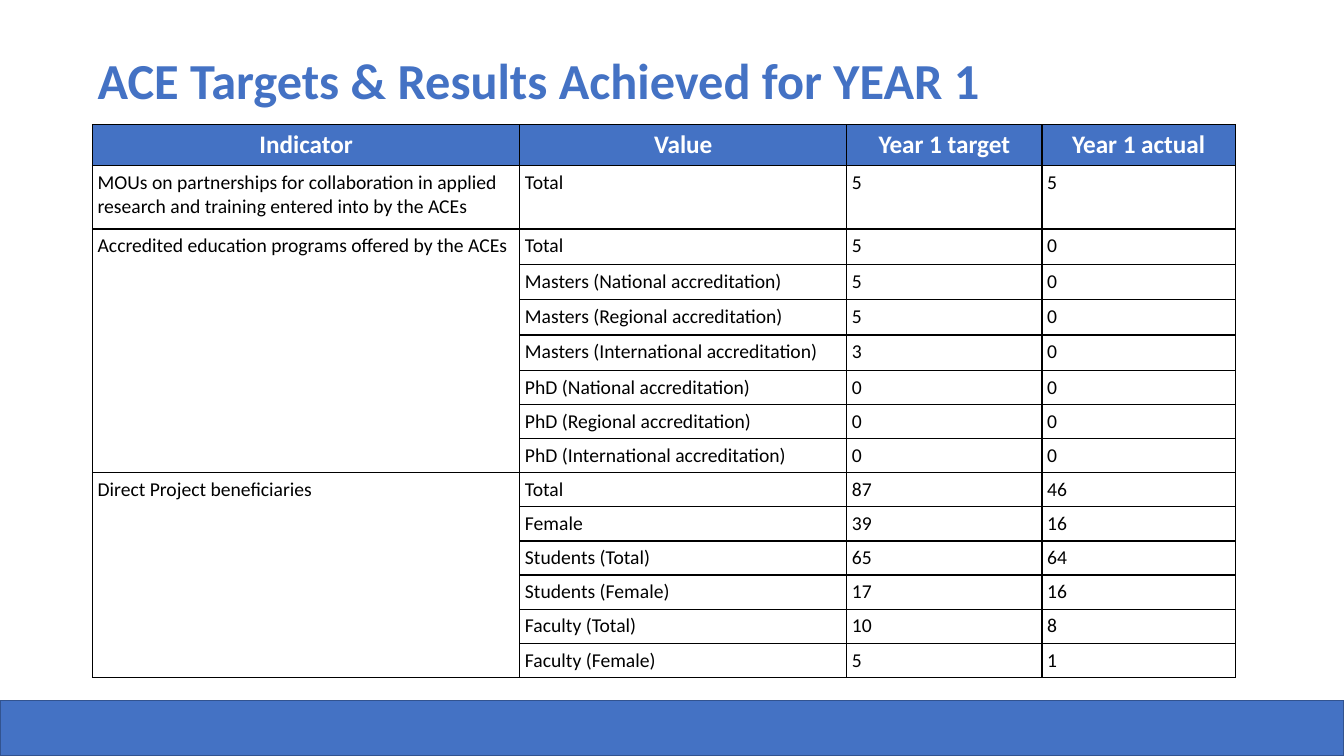
from lxml import etree
from pptx import Presentation
from pptx import util as u
from pptx.dml.color import RGBColor
from pptx.enum import shapes, text
from pptx.oxml import ns

FONT = "Calibri"
BLUE, DARK_BLUE, WHITE, BLACK = "4472C4", "32538F", "FFFFFF", "000000"
INSET = u.Cm(0.13)
LEFT = 2.33
COLUMN_WIDTHS = [10.77, 8.24, 4.92, 4.87]
ROW_HEIGHTS = [1.03, 1.6] + [0.89] * 4 + [0.86] * 9

HEADINGS = ["Indicator", "Value", "Year 1 target", "Year 1 actual"]
INDICATORS = [
    ("MOUs on partnerships for collaboration in applied research "
     "and training entered into by the ACEs",
     [("Total", 5, 5)]),
    ("Accredited education programs offered by the ACEs",
     [("Total", 5, 0),
      ("Masters (National accreditation)", 5, 0),
      ("Masters (Regional accreditation)", 5, 0),
      ("Masters (International accreditation)", 3, 0),
      ("PhD (National accreditation)", 0, 0),
      ("PhD (Regional accreditation)", 0, 0),
      ("PhD (International accreditation)", 0, 0)]),
    ("Direct Project beneficiaries",
     [("Total", 87, 46),
      ("Female", 39, 16),
      ("Students (Total)", 65, 64),
      ("Students (Female)", 17, 16),
      ("Faculty (Total)", 10, 8),
      ("Faculty (Female)", 5, 1)]),
]


def color(code):
    return RGBColor.from_string(code)


def write(frame, words, size, code, bold=False, align=text.PP_ALIGN.LEFT):
    frame.text = str(words)
    para = frame.paragraphs[0]
    para.alignment = align
    for span in para.runs:
        span.font.name = FONT
        span.font.size = u.Pt(size)
        span.font.bold = bold
        span.font.color.rgb = color(code)


def set_margins(holder):
    holder.margin_left = holder.margin_right = INSET
    holder.margin_top = holder.margin_bottom = INSET


def add_title(page, words):
    box = page.shapes.add_textbox(u.Cm(LEFT), u.Cm(1.02), u.Cm(29.21), u.Cm(2.13))
    frame = box.text_frame
    frame.word_wrap = True
    frame.vertical_anchor = text.MSO_ANCHOR.MIDDLE
    set_margins(frame)
    write(frame, words, 36, BLUE, bold=True)
    frame.paragraphs[0].line_spacing = 0.9


def add_footer_band(page, width):
    band = page.shapes.add_shape(
        shapes.MSO_SHAPE.RECTANGLE, 0, u.Cm(17.65), width, u.Cm(1.4))
    band.shadow.inherit = False
    band.fill.solid()
    band.fill.fore_color.rgb = color(BLUE)
    band.line.color.rgb = color(DARK_BLUE)
    band.line.width = u.Pt(1)


def add_borders(cell):
    """Draw a thin black line on all four sides of the cell."""
    properties = cell._tc.get_or_add_tcPr()
    for index, side in enumerate(("lnL", "lnR", "lnT", "lnB")):
        line = etree.Element(ns.qn(f"a:{side}"), w=str(u.Pt(1)))
        fill = etree.SubElement(line, ns.qn("a:solidFill"))
        etree.SubElement(fill, ns.qn("a:srgbClr"), val=BLACK)
        properties.insert(index, line)


def fill_row(table, row, values, header=False):
    for column, value in enumerate(values):
        cell = table.cell(row, column)
        set_margins(cell)
        if header:
            cell.fill.solid()
            cell.fill.fore_color.rgb = color(BLUE)
            write(cell.text_frame, value, 18, WHITE, True, text.PP_ALIGN.CENTER)
        else:
            cell.fill.background()
            write(cell.text_frame, value, 14, BLACK)
        add_borders(cell)


def add_results_table(page):
    frame = page.shapes.add_table(
        len(ROW_HEIGHTS), len(COLUMN_WIDTHS), u.Cm(LEFT), u.Cm(3.14),
        u.Cm(sum(COLUMN_WIDTHS)), u.Cm(sum(ROW_HEIGHTS)))
    table = frame.table
    for column, width in zip(table.columns, COLUMN_WIDTHS):
        column.width = u.Cm(width)
    for row, height in zip(table.rows, ROW_HEIGHTS):
        row.height = u.Cm(height)

    fill_row(table, 0, HEADINGS, header=True)
    first = 1
    for indicator, results in INDICATORS:
        for offset, result in enumerate(results):
            label = "" if offset else indicator
            fill_row(table, first + offset, (label, *result))
        last = first + len(results) - 1
        if last > first:
            table.cell(first, 0).merge(table.cell(last, 0))
        first = last + 1


def main():
    deck = Presentation()
    deck.slide_width, deck.slide_height = u.Cm(33.87), u.Cm(19.05)
    page = deck.slides.add_slide(deck.slide_layouts[6])
    add_footer_band(page, deck.slide_width)
    add_title(page, "ACE Targets & Results Achieved for YEAR 1")
    add_results_table(page)
    deck.save("out.pptx")


if __name__ == "__main__":
    main()
